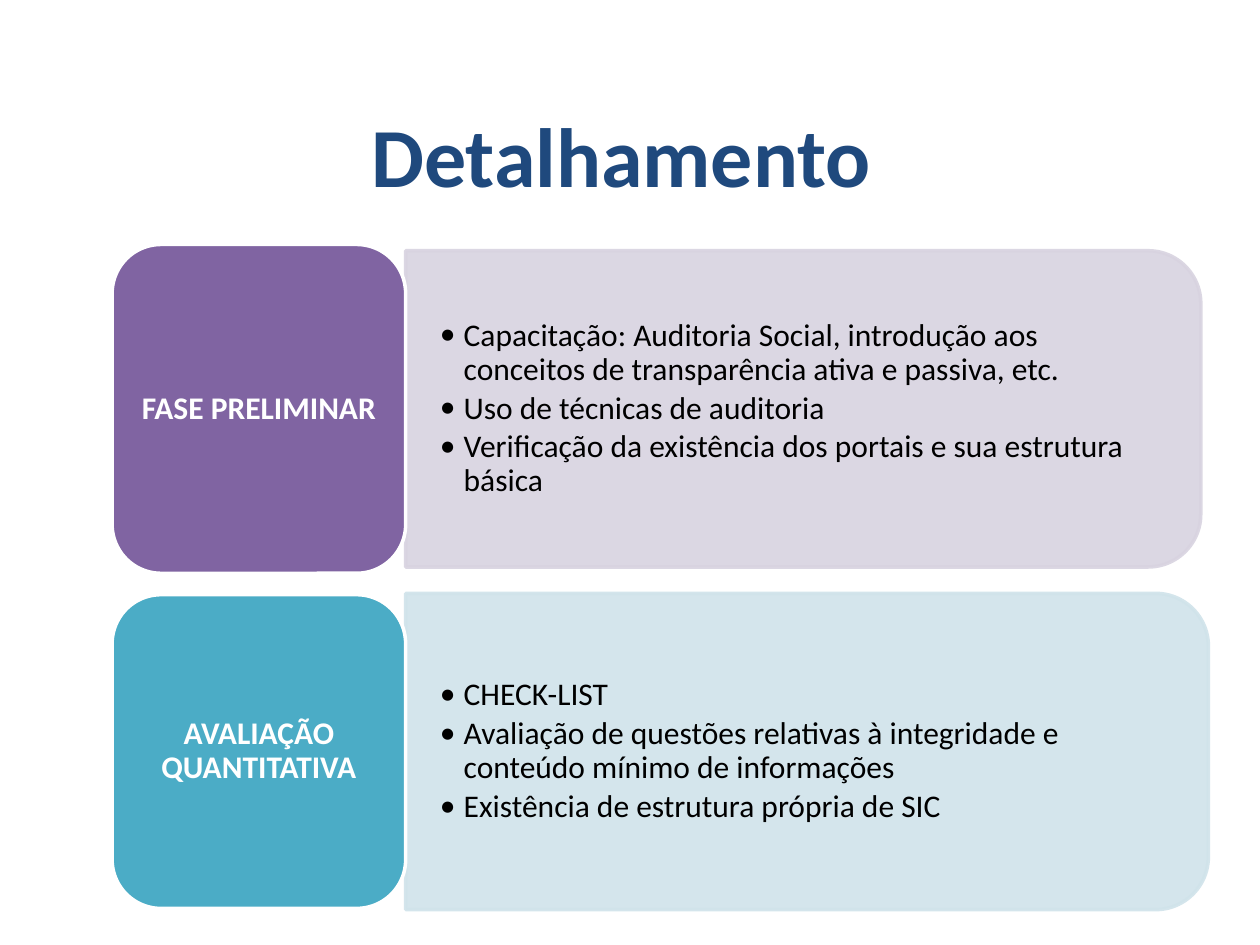
from lxml.etree import SubElement
from pptx import Presentation
from pptx.dml.color import RGBColor
from pptx.enum.shapes import MSO_SHAPE as Kind
from pptx.enum.text import MSO_ANCHOR as Anchor, PP_ALIGN as Align
from pptx.oxml.ns import qn
from pptx.util import Inches, Pt

WIDE, HIGH = Inches(10), Inches(7.5)
COL, ROW = WIDE / 100, HIGH / 100  # grid of 100 columns by 100 rows
FONT = "Calibri"
HUES = {
    "title": "1F497D", "text": "000000", "white": "FFFFFF",
    "plum": "8064A2", "lilac": "D8D3E0",
    "teal": "4BACC6", "ice": "D0E3EA",
}
LABEL = 23.3  # columns taken by a phase label
PANEL = 33.47  # rows taken by a phase panel
PHASES = [
    # box (left, middle row, columns), label rows, hues, name, points
    ((8.9, 43.27, 86.4), 34.8, ("plum", "lilac"), "FASE PRELIMINAR", [
        "Capacitação: Auditoria Social, introdução aos conceitos de "
        "transparência ativa e passiva, etc.",
        "Uso de técnicas de auditoria",
        "Verificação da existência dos portais e sua estrutura básica",
    ]),
    ((8.9, 79.53, 87), 33.2, ("teal", "ice"), "AVALIAÇÃO QUANTITATIVA", [
        "CHECK-LIST",
        "Avaliação de questões relativas à integridade e conteúdo mínimo "
        "de informações",
        "Existência de estrutura própria de SIC",
    ]),
]


def color(hue):
    return RGBColor.from_string(HUES[hue])


def place(left, top, cols, rows):
    """Turn grid units into lengths."""
    return [round(n) for n in (left * COL, top * ROW, cols * COL, rows * ROW)]


def style(para, size, hue, bold=False):
    font = para.font
    font.name, font.size, font.bold = FONT, Pt(size), bold
    font.color.rgb = color(hue)


def setup(frame, side, edge):
    """Wrap and centre a frame, with its insets in inches."""
    frame.word_wrap = True
    frame.vertical_anchor = Anchor.MIDDLE
    frame.margin_left = frame.margin_right = Inches(side)
    frame.margin_top = frame.margin_bottom = Inches(edge)


def paint(shape, fill, line):
    shape.shadow.inherit = False
    shape.fill.solid()
    shape.fill.fore_color.rgb = color(fill)
    shape.line.color.rgb = color(line)
    shape.line.width = Pt(2)


def fade(shape, share):
    """Set the opacity of fill and line, in percent."""
    for tint in shape.element.spPr.iter(qn("a:srgbClr")):
        SubElement(tint, qn("a:alpha"), val=str(share * 1000))


def bullet(para):
    props = para._p.get_or_add_pPr()
    props.set("marL", str(Inches(0.19)))
    props.set("indent", str(-Inches(0.19)))
    SubElement(props, qn("a:buFont"), typeface=FONT)
    SubElement(props, qn("a:buChar"), char="•")


def title(slide, box, text):
    frame = slide.shapes.add_textbox(*place(*box)).text_frame
    setup(frame, 0.1, 0.05)
    frame.text = text
    para = frame.paragraphs[0]
    para.alignment = Align.CENTER
    style(para, 48, "title", True)


def panel(slide, box, hue, points):
    """Draw a panel rounded on its right side, with its bullet list."""
    left, top, wide, high = place(*box)
    shift = (wide - high) // 2
    shape = slide.shapes.add_shape(
        Kind.ROUND_2_SAME_RECTANGLE, left + shift, top - shift, high, wide)
    shape.rotation = 90
    paint(shape, hue, hue)
    fade(shape, 90)

    pad = high // 20
    frame = slide.shapes.add_textbox(
        left, top + pad, wide - pad, high - 2 * pad).text_frame
    setup(frame, 0.27, 0.14)
    frame.text = "\n".join(points)
    for para in frame.paragraphs:
        bullet(para)
        para.line_spacing = 0.9
        para.space_after = Pt(2.7)
        style(para, 18, "text")


def label(slide, box, hue, name):
    shape = slide.shapes.add_shape(Kind.ROUNDED_RECTANGLE, *place(*box))
    paint(shape, hue, "white")
    frame = shape.text_frame
    setup(frame, 0.07, 0.04)
    frame.text = name
    para = frame.paragraphs[0]
    para.alignment = Align.CENTER
    para.line_spacing = 0.9
    style(para, 18, "white", True)


def phase(slide, box, rows, hues, name, points):
    left, mid, cols = box
    dark, light = hues
    panel(slide, (left + LABEL, mid - PANEL / 2, cols - LABEL, PANEL),
          light, points)
    label(slide, (left, mid - rows / 2, LABEL, rows), dark, name)


def main():
    deck = Presentation()
    deck.slide_width, deck.slide_height = WIDE, HIGH
    slide = deck.slides.add_slide(deck.slide_layouts[6])
    title(slide, (4.3, 10.13, 90, 12.4), "Detalhamento")
    for item in PHASES:
        phase(slide, *item)
    deck.save("out.pptx")


if __name__ == "__main__":
    main()
